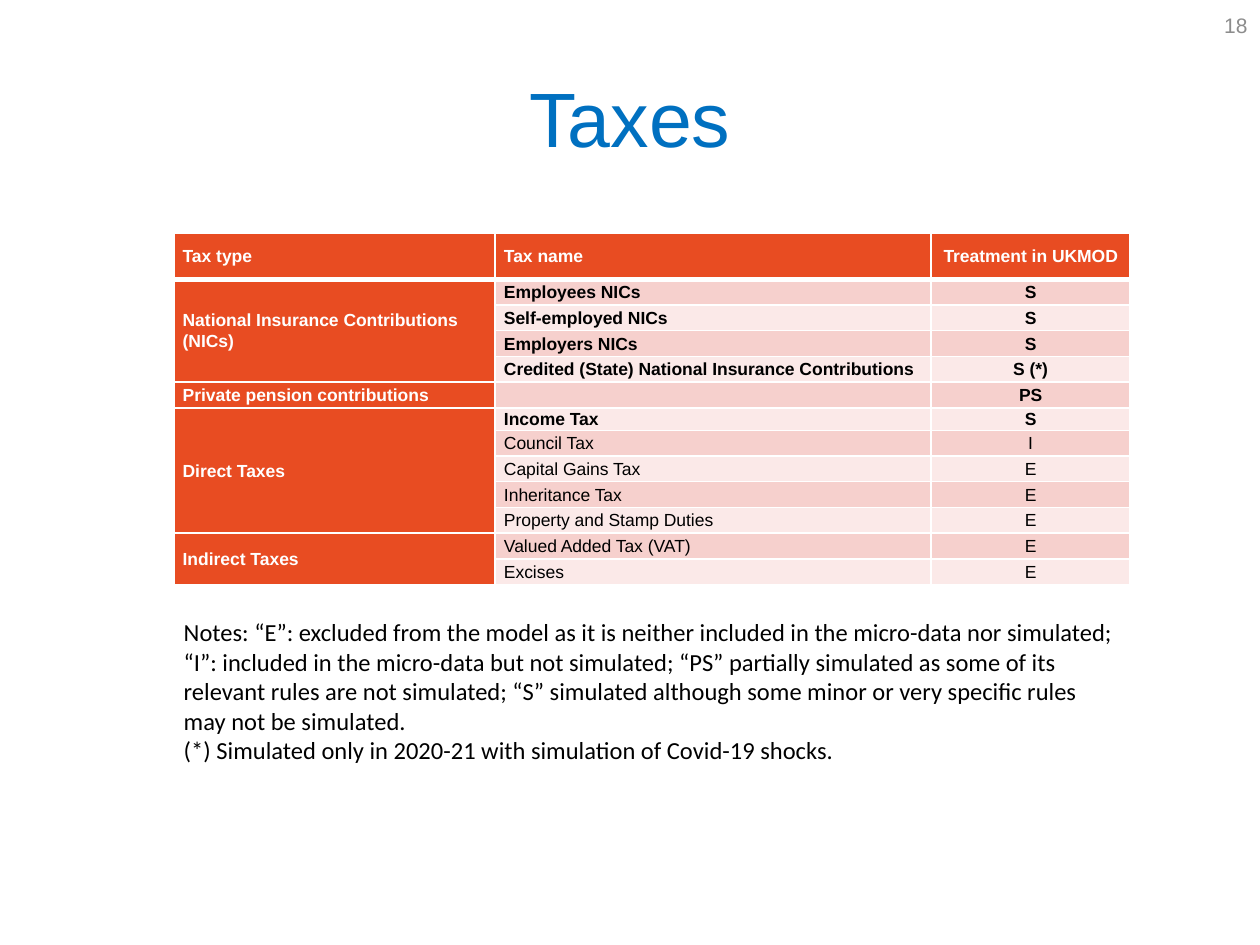
"""Build the Taxes slide: how each tax is treated in UKMOD."""
from lxml.etree import SubElement
from pptx import Presentation
from pptx.dml.color import RGBColor
from pptx.enum.text import MSO_ANCHOR as Anchor, PP_ALIGN as Align
from pptx.oxml import parse_xml
from pptx.oxml.ns import nsdecls, qn
from pptx.util import Inches, Pt

ORANGE, ROSE, BLUSH, WHITE, BLACK = "E84C22", "F6D0CD", "FBE9E8", "FFFFFF", "000000"


def write(paragraph, text, size, color, face="Arial", align=Align.LEFT, bold=False):
    """Put one formatted run in the paragraph, or size the paragraph's end if there is no text."""
    paragraph.alignment = align
    if not text:
        SubElement(paragraph._p, qn("a:endParaRPr"), sz=str(size * 100))
        return
    run = paragraph.add_run()
    run.text = text
    for name, value in {"size": Pt(size), "name": face, "bold": bold}.items():
        setattr(run.font, name, value)
    run.font.color.rgb = RGBColor.from_string(color)


def rule(cell, side, points):
    """Draw a white border along one side of the cell."""
    cell._tc.get_or_add_tcPr().append(parse_xml(
        f'<a:{side} {nsdecls("a")} w="{Pt(points)}"><a:solidFill>'
        f'<a:srgbClr val="{WHITE}"/></a:solidFill></a:{side}>'))


deck = Presentation()
deck.slide_width, deck.slide_height = Inches(10), Inches(7.5)
col, row = deck.slide_width / 100, deck.slide_height / 75
slide = deck.slides.add_slide(deck.slide_layouts[5])

heading = slide.shapes.title
places = {"left": 5 * col, "top": 3 * row, "width": 90 * col, "height": 12.5 * row}
for side, length in places.items():
    setattr(heading, side, int(length))
heading.text_frame.vertical_anchor = Anchor.MIDDLE
write(heading.text_frame.paragraphs[0], "Taxes", 44, "0070C0", align=Align.CENTER)

page = slide.shapes.add_textbox(int(76.7 * col), 0, int(23.3 * col), int(4 * row)).text_frame
page.word_wrap, page.vertical_anchor = True, Anchor.MIDDLE
write(page.paragraphs[0], "18", 12, "8C8C8C", align=Align.RIGHT)

header = ("Tax type", "Tax name", "Treatment in UKMOD")
taxes = {
    "National Insurance Contributions (NICs)": [
        ("Employees NICs", "S"), ("Self-employed NICs", "S"), ("Employers NICs", "S"),
        ("Credited (State) National Insurance Contributions", "S (*)")],
    "Private pension contributions": [("", "PS")],
    "Direct Taxes": [
        ("Income Tax", "S"), ("Council Tax", "I"), ("Capital Gains Tax", "E"),
        ("Inheritance Tax", "E"), ("Property and Stamp Duties", "E")],
    "Indirect Taxes": [("Valued Added Tax (VAT)", "E"), ("Excises", "E")],
}
lines = [header]
for tax_type, members in taxes.items():
    for index, member in enumerate(members):
        lines.append(("" if index else tax_type, *member))

treatments = slide.shapes.add_table(
    len(lines), len(header), int(13.8 * col), int(18.5 * row), int(75.9 * col), int(27.8 * row)).table
for column, width in zip(treatments.columns, (25.5, 34.6, 15.8)):
    column.width = int(width * col)

for r, line in enumerate(lines):
    treatments.rows[r].height = Pt(26.4 if r == 0 else 11.7 if line[1] == "Income Tax" else 14.7)
    for c, text in enumerate(line):
        cell = treatments.cell(r, c)
        label = r == 0 or c == 0
        for side, points in {"lnL": 1, "lnR": 1, "lnT": 3 if r == 1 else 1, "lnB": 1 if r else 3}.items():
            rule(cell, side, points)
        cell.fill.solid()
        cell.fill.fore_color.rgb = RGBColor.from_string(ORANGE if label else ROSE if r % 2 else BLUSH)
        layout = {"margin_left": Inches(0.07), "margin_right": Inches(0.07), "margin_top": 0,
                  "margin_bottom": 0, "vertical_anchor": Anchor.MIDDLE}
        for name, value in layout.items():
            setattr(cell, name, value)
        paragraph = cell.text_frame.paragraphs[0]
        paragraph.line_spacing = 1.07
        write(paragraph, text, 10, WHITE if label else BLACK, align=Align.CENTER if c == 2 else Align.LEFT,
              bold=label or line[2] not in ("I", "E"))

first = 1
for members in taxes.values():
    last = first + len(members) - 1
    if last > first:
        treatments.cell(first, 0).merge(treatments.cell(last, 0))
    first = last + 1

notes = slide.shapes.add_textbox(
    int(13.6 * col), int(48.5 * row), int(75.9 * col), int(12.8 * row)).text_frame
notes.word_wrap = True
legend = (
    "Notes: “E”: excluded from the model as it is neither included in the micro-data nor simulated; "
    "“I”: included in the micro-data but not simulated; “PS” partially simulated as some of its "
    "relevant rules are not simulated; “S” simulated although some minor or very specific rules "
    "may not be simulated.")
write(notes.paragraphs[0], legend, 14, BLACK, face="Calibri")
write(notes.add_paragraph(), "(*) Simulated only in 2020-21 with simulation of Covid-19 shocks.",
      14, BLACK, face="Calibri")

deck.save("out.pptx")
